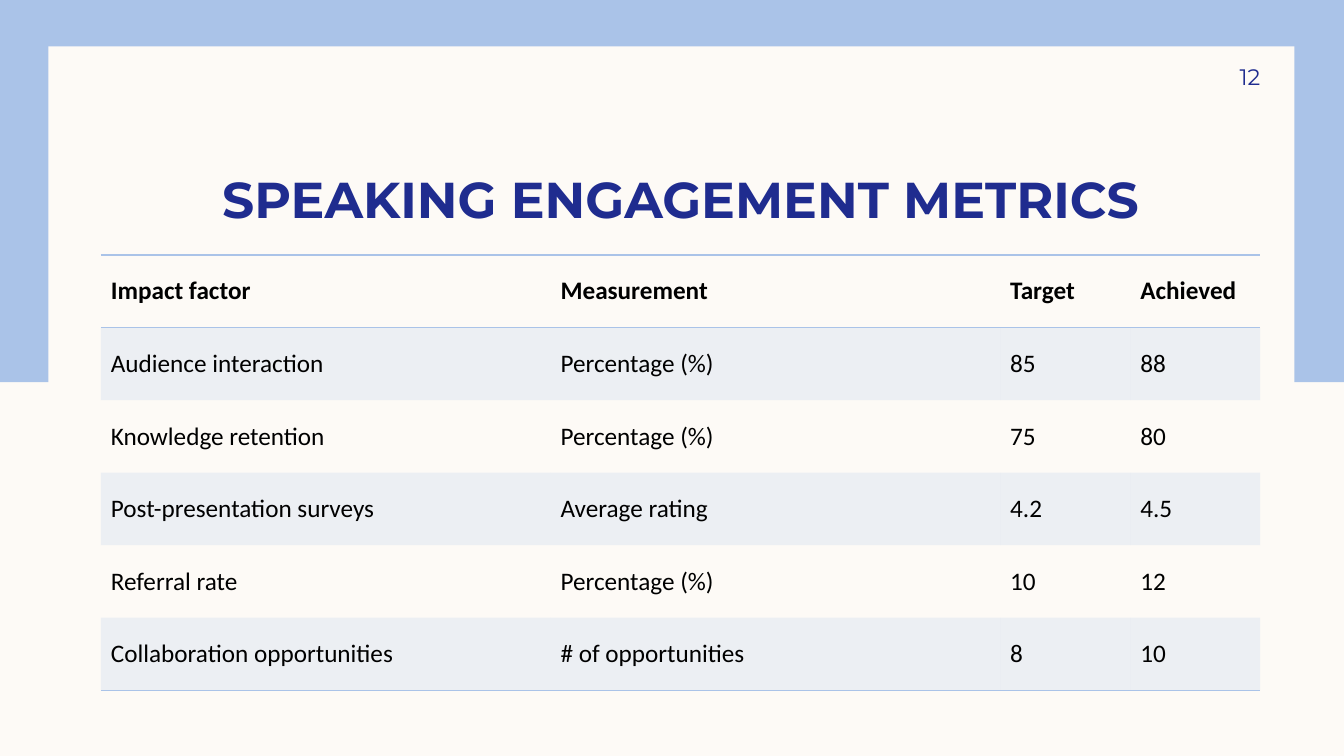
from lxml.etree import SubElement
from pptx import Presentation
from pptx.dml.color import RGBColor
from pptx.enum.shapes import MSO_SHAPE
from pptx.enum.text import MSO_ANCHOR, PP_ALIGN
from pptx.oxml.ns import qn
from pptx.util import Inches, Pt

# Content
TITLE = "SPEAKING ENGAGEMENT METRICS"
PAGE_NUMBER = "12"
METRICS = [
    ("Impact factor", "Measurement", "Target", "Achieved"),
    ("Audience interaction", "Percentage (%)", "85", "88"),
    ("Knowledge retention", "Percentage (%)", "75", "80"),
    ("Post-presentation surveys", "Average rating", "4.2", "4.5"),
    ("Referral rate", "Percentage (%)", "10", "12"),
    ("Collaboration opportunities", "# of opportunities", "8", "10"),
]

# Style
CREAM = RGBColor(0xFD, 0xFA, 0xF6)
SKY = RGBColor(0xAA, 0xC3, 0xE8)
NAVY = RGBColor(0x1F, 0x2C, 0x8F)
BLACK = RGBColor(0, 0, 0)
BAND_OPACITY = 20  # percent
NO_GRID_STYLE = "{2D5ABB26-0587-4C30-8999-92F81FD0307C}"

# Layout, in inches
WIDTH, HEIGHT = 13.33, 7.5
COLUMNS = (4.46, 4.46, 1.29, 1.29)
ROW = 0.72
LEFT, TABLE_TOP = 1, 2.53
CONTENT_WIDTH = sum(COLUMNS)
NUMBER_WIDTH = 1.17

deck = Presentation()
deck.slide_width, deck.slide_height = Inches(WIDTH), Inches(HEIGHT)
slide = deck.slides.add_slide(deck.slide_layouts[6])
slide.background.fill.solid()
slide.background.fill.fore_color.rgb = CREAM


def add_panel(box, color):
    panel = slide.shapes.add_shape(MSO_SHAPE.RECTANGLE, *map(Inches, box))
    panel.shadow.inherit = False
    panel.fill.solid()
    panel.fill.fore_color.rgb = color
    panel.line.fill.background()


def style_font(font, name, size, color, bold=False):
    font.name, font.size, font.bold = name, Pt(size), bold
    font.color.rgb = color


def add_label(text, box, insets, size, align, anchor, bold=False):
    frame = slide.shapes.add_textbox(*map(Inches, box)).text_frame
    frame.word_wrap = True
    frame.vertical_anchor = anchor
    (frame.margin_left, frame.margin_top,
     frame.margin_right, frame.margin_bottom) = map(Inches, insets)
    paragraph = frame.paragraphs[0]
    paragraph.text, paragraph.alignment = text, align
    style_font(paragraph.font, "Montserrat", size, NAVY, bold)


def add_border(cell, edge):
    line = SubElement(cell._tc.get_or_add_tcPr(), qn(f"a:{edge}"), w=str(Pt(1)))
    SubElement(SubElement(line, qn("a:solidFill")), qn("a:srgbClr"), val=str(SKY))


def fill_band(cell):
    cell.fill.solid()
    cell.fill.fore_color.rgb = SKY
    color = cell._tc.tcPr.find(f"{qn('a:solidFill')}/{qn('a:srgbClr')}")
    SubElement(color, qn("a:alpha"), val=str(BAND_OPACITY * 1000))


# Sky frame around the cream panel
add_panel((0, 0, WIDTH, 3.79), SKY)
add_panel((0.48, 0.46, 12.36, 6.59), CREAM)

# Title and page number
add_label(TITLE, (LEFT, 1.16, CONTENT_WIDTH, 1.11), (0.1, 0, 0.1, 0),
          36, PP_ALIGN.CENTER, MSO_ANCHOR.BOTTOM, bold=True)
add_label(PAGE_NUMBER, (LEFT + CONTENT_WIDTH - NUMBER_WIDTH, 0.5, NUMBER_WIDTH, 0.52),
          (0.1, 0.05, 0, 0.05), 16, PP_ALIGN.RIGHT, MSO_ANCHOR.MIDDLE)

# Metrics table
table = slide.shapes.add_table(
    len(METRICS), len(COLUMNS), Inches(LEFT), Inches(TABLE_TOP),
    Inches(CONTENT_WIDTH), Inches(ROW * len(METRICS))).table
table.horz_banding = False
table._tbl.tblPr.find(qn("a:tableStyleId")).text = NO_GRID_STYLE
for column, width in zip(table.columns, COLUMNS):
    column.width = Inches(width)

for r, metric in enumerate(METRICS):
    table.rows[r].height = Inches(ROW)
    is_header, is_last = r == 0, r == len(METRICS) - 1
    for c, value in enumerate(metric):
        cell = table.cell(r, c)
        cell.text = value
        cell.vertical_anchor = MSO_ANCHOR.MIDDLE
        style_font(cell.text_frame.paragraphs[0].font, "Calibri", 18, BLACK, is_header)
        if is_header:
            add_border(cell, "lnT")
        if is_header or is_last:
            add_border(cell, "lnB")
        if r % 2:
            fill_band(cell)
        else:
            cell.fill.background()

deck.save("out.pptx")
